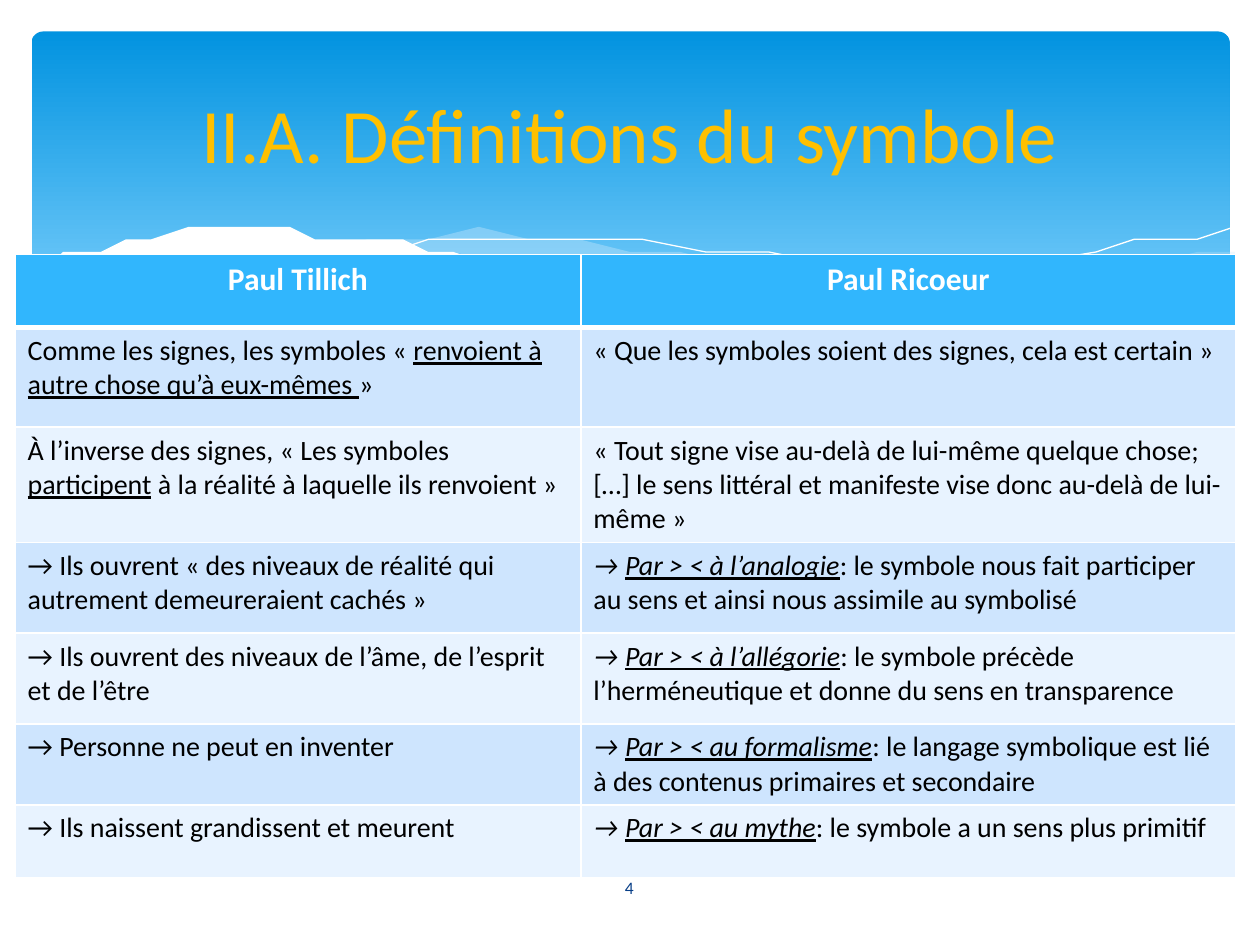
from dataclasses import dataclass
from typing import NamedTuple, Optional

from lxml.etree import SubElement
from pptx import Presentation
from pptx.dml.color import RGBColor
from pptx.enum.shapes import MSO_SHAPE as Preset
from pptx.enum.text import MSO_ANCHOR as Anchor, PP_ALIGN as Align
from pptx.oxml.ns import qn
from pptx.util import Inches, Pt

UNIT = Inches(0.1)  # the slide is a grid of 100 columns by 75 rows
COLUMNS, ROWS = 100, 75


@dataclass(frozen=True)
class Theme:
    font: str = "Calibri"
    banner_top: str = "0293E0"
    banner_bottom: str = "83D3FE"
    mist: str = "C6E7FC"
    white: str = "FFFFFF"
    black: str = "000000"
    title: str = "FFC000"
    header: str = "31B6FD"
    bands: tuple = ("CEE5FE", "E8F3FF")
    number: str = "073E87"
    title_size: int = 44
    header_size: int = 18
    body_size: int = 16
    number_size: int = 10


THEME = Theme()


class Box(NamedTuple):
    left: float
    top: float
    width: float
    height: float

    def lengths(self) -> list:
        return [units(value) for value in self]


class Piece(NamedTuple):
    text: str
    underline: bool = False
    italic: bool = False


@dataclass(frozen=True)
class Wave:
    """A curve in grid units; without a fill it is an open white line."""
    points: tuple
    fill: Optional[str] = None
    opacity: int = 100


WAVES = (
    Wave(((97.5, 20), (94.8, 20.4), (90.6, 21.3), (86.1, 22.3), (77.9, 24.2),
          (70.6, 25.7), (66.1, 26.5), (69.1, 26.9), (73.2, 27.4), (76.9, 27.7),
          (80.3, 27.8), (84.4, 27.7), (88.1, 27.3), (92.1, 26.5), (94.9, 25.7),
          (97.6, 24.7), (97.6, 20)), THEME.mist, 29),
    Wave(((89.3, 27.3), (83.7, 26.5), (77.5, 25.4), (70.6, 24), (62.9, 22.2),
          (58.4, 21.1), (54.1, 20.3), (50.2, 19.6), (46.5, 19.1), (42, 18.7),
          (38, 18.5), (34.4, 18.6), (31.3, 18.8), (28.6, 19.1), (32.3, 19.6),
          (36.2, 20.3), (40.4, 21.1), (44.9, 22.2), (53, 24), (60.1, 25.5),
          (66.5, 26.6), (72.2, 27.4), (77.3, 27.7), (81.8, 27.8),
          (85.7, 27.7)), THEME.mist, 40),
    Wave(((30.9, 19.5), (33.5, 19.1), (36.3, 18.9), (40.1, 18.7), (43.3, 18.7),
          (46.9, 18.9), (51, 19.2), (55.6, 19.7), (60.8, 20.4), (66.5, 21.3),
          (72.7, 22.6), (79.5, 24.1), (86.9, 26.1), (90.7, 27.2))),
    Wave(((61.3, 25.7), (65.3, 24.6), (69.5, 23.5), (74.8, 22.3), (80.6, 21),
          (86.6, 19.9), (89.5, 19.4), (92.4, 19), (95.1, 18.7), (97.5, 18.5))),
    Wave(((97.7, 24.6), (95, 25.6), (92, 26.5), (88.7, 27.1), (85, 27.5),
          (80.9, 27.7), (76.1, 27.5), (70.8, 27), (64.8, 26.2), (57.9, 25),
          (50.3, 23.3), (44.7, 22), (39.1, 20.7), (36.5, 20.2), (34, 19.7),
          (31.6, 19.4), (29.2, 19), (27.1, 18.8), (25, 18.6), (23, 18.5),
          (21.1, 18.4), (17.7, 18.4), (14.6, 18.5), (11.9, 18.7), (9.5, 19.1),
          (7.6, 19.5), (5.9, 19.9), (4.6, 20.3), (3.6, 20.7), (2.3, 21.3),
          (2.3, 32.9), (97.7, 32.9)), THEME.white),
)


def contrast(label: str, meaning: str) -> tuple:
    """A right-hand cell: an arrow, what the symbol differs from, and why."""
    return Piece("→ ", italic=True), Piece(f"Par > < {label}", True, True), Piece(f": {meaning}")


HEADERS = ("Paul Tillich", "Paul Ricoeur")
DEFINITIONS = (
    ((Piece("Comme les signes, les symboles « "),
      Piece("renvoient à autre chose qu’à eux-mêmes ", True), Piece("»")),
     (Piece("« Que les symboles soient des signes, cela est certain »"),)),
    ((Piece("À l’inverse des signes, « Les symboles "), Piece("participent", True),
      Piece(" à la réalité à laquelle ils renvoient »")),
     (Piece("« Tout signe vise au-delà de lui-même quelque chose; […] le sens littéral "
            "et manifeste vise donc au-delà de lui-même »"),)),
    ((Piece("→ Ils ouvrent « des niveaux de réalité qui autrement demeureraient cachés »"),),
     contrast("à l’analogie", "le symbole nous fait participer au sens et ainsi nous "
              "assimile au symbolisé")),
    ((Piece("→ Ils ouvrent des niveaux de l’âme, de l’esprit et de l’être"),),
     contrast("à l’allégorie", "le symbole précède l’herméneutique et donne du sens "
              "en transparence")),
    ((Piece("→ Personne ne peut en inventer"),),
     contrast("au formalisme", "le langage symbolique est lié à des contenus primaires "
              "et secondaire")),
    ((Piece("→ Ils naissent grandissent et meurent"),),
     contrast("au mythe", "le symbole a un sens plus primitif")),
)
TABLE_BOX = Box(1.2, 20.2, 96.9, 48.7)
COLUMN_WIDTHS = (44.9, 52)
ROW_HEIGHTS = (5.8, 7.9, 8.7, 7.2, 7.2, 6.1, 5.8)


def units(value: float) -> int:
    return round(value * UNIT)


def color(code: str) -> RGBColor:
    return RGBColor.from_string(code)


def paint(target, code: str) -> None:
    target.fill.solid()
    target.fill.fore_color.rgb = color(code)


def write(paragraph, pieces: tuple, size: int, code: str, bold=False, align=Align.LEFT) -> None:
    paragraph.alignment = align
    for piece in pieces:
        run = paragraph.add_run()
        run.text = piece.text
        formats = {"name": THEME.font, "size": Pt(size), "bold": bold,
                   "underline": piece.underline, "italic": piece.italic}
        for name, value in formats.items():
            setattr(run.font, name, value)
        run.font.color.rgb = color(code)


def add_label(slide, box: Box, text: str, size: int, code: str) -> None:
    frame = slide.shapes.add_textbox(*box.lengths()).text_frame
    frame.word_wrap = True
    frame.vertical_anchor = Anchor.MIDDLE
    write(frame.paragraphs[0], (Piece(text),), size, code, align=Align.CENTER)


def add_banner(slide, box: Box) -> None:
    banner = slide.shapes.add_shape(Preset.ROUNDED_RECTANGLE, *box.lengths())
    banner.adjustments[0] = 0.034
    banner.shadow.inherit = False
    banner.line.fill.background()
    banner.fill.gradient()
    banner.fill.gradient_angle = 270
    stops = ((0, THEME.banner_top), (0.9, THEME.banner_bottom))
    for stop, (position, code) in zip(banner.fill.gradient_stops, stops):
        stop.position = position
        stop.color.rgb = color(code)


def add_wave(slide, wave: Wave) -> None:
    start, *others = wave.points
    builder = slide.shapes.build_freeform(*start, scale=float(UNIT))
    builder.add_line_segments(others, close=wave.fill is not None)
    shape = builder.convert_to_shape()
    shape.shadow.inherit = False
    if wave.fill is None:
        shape.fill.background()
        shape.line.color.rgb = color(THEME.white)
        shape.line.width = Pt(0)
        return
    shape.line.fill.background()
    paint(shape, wave.fill)
    if wave.opacity < 100:
        tint = shape.fill._xPr.find(f".//{qn('a:srgbClr')}")
        SubElement(tint, qn("a:alpha"), val=str(wave.opacity * 1000))


def add_borders(cell, bottom: int) -> None:
    properties = cell._tc.get_or_add_tcPr()
    for side, width in {"L": 1, "R": 1, "T": 1, "B": bottom}.items():
        line = SubElement(properties, qn(f"a:ln{side}"), w=str(Pt(width)))
        fill = SubElement(line, qn("a:solidFill"))
        SubElement(fill, qn("a:srgbClr"), val=THEME.white)


def add_definitions(slide) -> None:
    table = slide.shapes.add_table(
        len(ROW_HEIGHTS), len(COLUMN_WIDTHS), *TABLE_BOX.lengths()).table
    for column, width in zip(table.columns, COLUMN_WIDTHS):
        column.width = units(width)
    for row, height in zip(table.rows, ROW_HEIGHTS):
        row.height = units(height)
    for cell, text in zip(table.rows[0].cells, HEADERS):
        add_borders(cell, bottom=3)
        paint(cell, THEME.header)
        write(cell.text_frame.paragraphs[0], (Piece(text),), THEME.header_size,
              THEME.white, bold=True, align=Align.CENTER)
    for index, definition in enumerate(DEFINITIONS):
        for cell, pieces in zip(table.rows[index + 1].cells, definition):
            add_borders(cell, bottom=1)
            paint(cell, THEME.bands[index % 2])
            write(cell.text_frame.paragraphs[0], pieces, THEME.body_size, THEME.black)


def main() -> None:
    presentation = Presentation()
    presentation.slide_width, presentation.slide_height = units(COLUMNS), units(ROWS)
    slide = presentation.slides.add_slide(presentation.slide_layouts[6])
    add_banner(slide, Box(2.5, 2.5, 95.1, 27))
    for wave in WAVES:
        add_wave(slide, wave)
    add_definitions(slide)
    add_label(slide, Box(43.6, 68.4, 12.7, 4), "4", THEME.number_size, THEME.number)
    add_label(slide, Box(5, 3.7, 90, 13.7), "II.A. Définitions du symbole",
              THEME.title_size, THEME.title)
    presentation.save("out.pptx")


if __name__ == "__main__":
    main()
